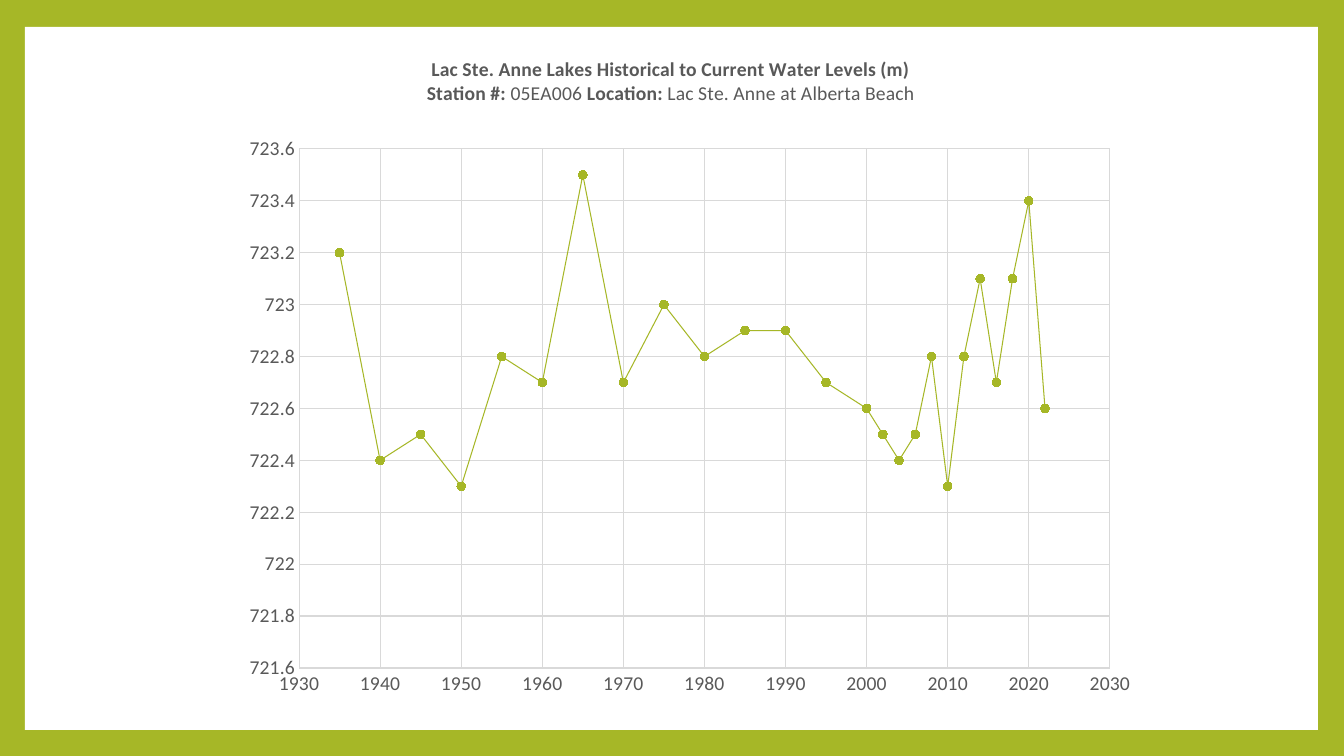
import pptx
import pptx.chart.data
import pptx.dml.color
import pptx.enum.chart
import pptx.enum.shapes
import pptx.enum.text
import pptx.oxml
import pptx.oxml.ns
import pptx.util

PX = 12192000 / 1344
COLORS = {"green": "A6B727", "marker": "ACBE20", "white": "FFFFFF",
          "text": "595959", "grid": "D9D9D9"}
LEVELS = [
    (1935, 723.2), (1940, 722.4), (1945, 722.5), (1950, 722.3), (1955, 722.8),
    (1960, 722.7), (1965, 723.5), (1970, 722.7), (1975, 723.0), (1980, 722.8),
    (1985, 722.9), (1990, 722.9), (1995, 722.7), (2000, 722.6), (2002, 722.5),
    (2004, 722.4), (2006, 722.5), (2008, 722.8), (2010, 722.3), (2012, 722.8),
    (2014, 723.1), (2016, 722.7), (2018, 723.1), (2020, 723.4), (2022, 722.6),
]
TITLE = [
    [("Lac Ste. Anne Lakes Historical to Current Water Levels (m)", True)],
    [("Station #: ", True), ("05EA006 ", False), ("Location: ", True),
     ("Lac Ste. Anne at Alberta Beach", False)],
]


def emu(px):
    return pptx.util.Emu(round(px * PX))


def rgb(name):
    return pptx.dml.color.RGBColor.from_string(COLORS[name])


def set_all(obj, values):
    for name, value in values.items():
        setattr(obj, name, value)


class Deck:
    font = "Calibri"
    size = 14

    def __init__(self):
        self.prs = pptx.Presentation()
        set_all(self.prs, {"slide_width": emu(1344), "slide_height": emu(756)})
        self.s = self.prs.slides.add_slide(self.prs.slide_layouts[6])

    def background(self, color):
        fill = self.s.background.fill
        fill.solid()
        fill.fore_color.rgb = rgb(color)

    def rect(self, box, color):
        sp = self.s.shapes.add_shape(
            pptx.enum.shapes.MSO_SHAPE.RECTANGLE, *map(emu, box))
        sp.shadow.inherit = False
        sp.fill.solid()
        sp.fill.fore_color.rgb = rgb(color)
        sp.line.fill.background()

    def style_font(self, font, bold=False):
        set_all(font, {"name": self.font, "size": pptx.util.Pt(self.size),
                       "bold": bold})
        font.color.rgb = rgb("text")

    def style_line(self, line, color, width):
        line.color.rgb = rgb(color)
        line.width = pptx.util.Pt(width)

    def scatter(self, box, points):
        data = pptx.chart.data.XyChartData()
        series = data.add_series("Series 1")
        for year, level in points:
            series.add_data_point(year, level)
        chart = self.s.shapes.add_chart(
            pptx.enum.chart.XL_CHART_TYPE.XY_SCATTER_LINES,
            *map(emu, box), data).chart
        chart.has_legend = False
        self.style_font(chart.font)
        plot = chart.plots[0]
        plot.vary_by_categories = False
        ser = plot.series[0]
        ser.smooth = False
        self.style_line(ser.format.line, "green", 0.75)
        set_all(ser.marker, {"style": pptx.enum.chart.XL_MARKER_STYLE.CIRCLE,
                             "size": 6})
        ser.marker.format.fill.solid()
        ser.marker.format.fill.fore_color.rgb = rgb("marker")
        self.style_line(ser.marker.format.line, "green", 0.75)
        return chart

    def axis(self, axis, low, high, step, number_format):
        none = pptx.enum.chart.XL_TICK_MARK.NONE
        set_all(axis, {"minimum_scale": low, "maximum_scale": high,
                       "major_unit": step, "has_major_gridlines": True,
                       "major_tick_mark": none, "minor_tick_mark": none})
        set_all(axis.tick_labels, {"number_format": number_format,
                                   "number_format_is_linked": False})
        self.style_font(axis.tick_labels.font)
        self.style_line(axis.major_gridlines.format.line, "grid", 0.75)

    def chart_title(self, chart, lines):
        tf = chart.chart_title.text_frame
        for i, runs in enumerate(lines):
            p = tf.add_paragraph() if i else tf.paragraphs[0]
            p.alignment = pptx.enum.text.PP_ALIGN.CENTER
            for text, bold in runs:
                r = p.add_run()
                r.text = text
                self.style_font(r.font, bold)
        chart.chart_title.include_in_layout = False

    def place(self, parent, before, values):
        """Give a chart part a manual layout, in fractions of the chart."""
        ns = pptx.oxml.ns
        for old in parent.findall(ns.qn("c:layout")):
            parent.remove(old)
        parts = "".join(f'<c:{k} val="{v}"/>' for k, v in values.items())
        layout = pptx.oxml.parse_xml(
            f'<c:layout {ns.nsdecls("c")}><c:manualLayout>{parts}'
            '</c:manualLayout></c:layout>')
        parent.find(ns.qn(before)).addprevious(layout)


def main():
    deck = Deck()
    deck.background("green")
    deck.rect((25, 27, 1293, 703), "white")
    chart = deck.scatter((231, 46, 918, 663), LEVELS)
    deck.axis(chart.category_axis, 1930, 2030, 10, "General")
    deck.axis(chart.value_axis, 721.6, 723.6, 0.2, "General")
    deck.style_line(chart.category_axis.format.line, "grid", 1)
    chart.value_axis.format.line.fill.background()
    deck.chart_title(chart, TITLE)

    edges = {"xMode": "edge", "yMode": "edge"}
    title = chart.chart_title._element
    deck.place(title, "c:overlay", {**edges, "x": 0.21, "y": 0.01})
    area = chart.plots[0]._element.getparent()
    deck.place(area, "c:scatterChart", {
        "layoutTarget": "inner", **edges,
        "x": round(68 / 918, 4), "y": round(103 / 663, 4),
        "w": round(811 / 918, 4), "h": round(519 / 663, 4)})
    deck.prs.save("out.pptx")


if __name__ == "__main__":
    main()
